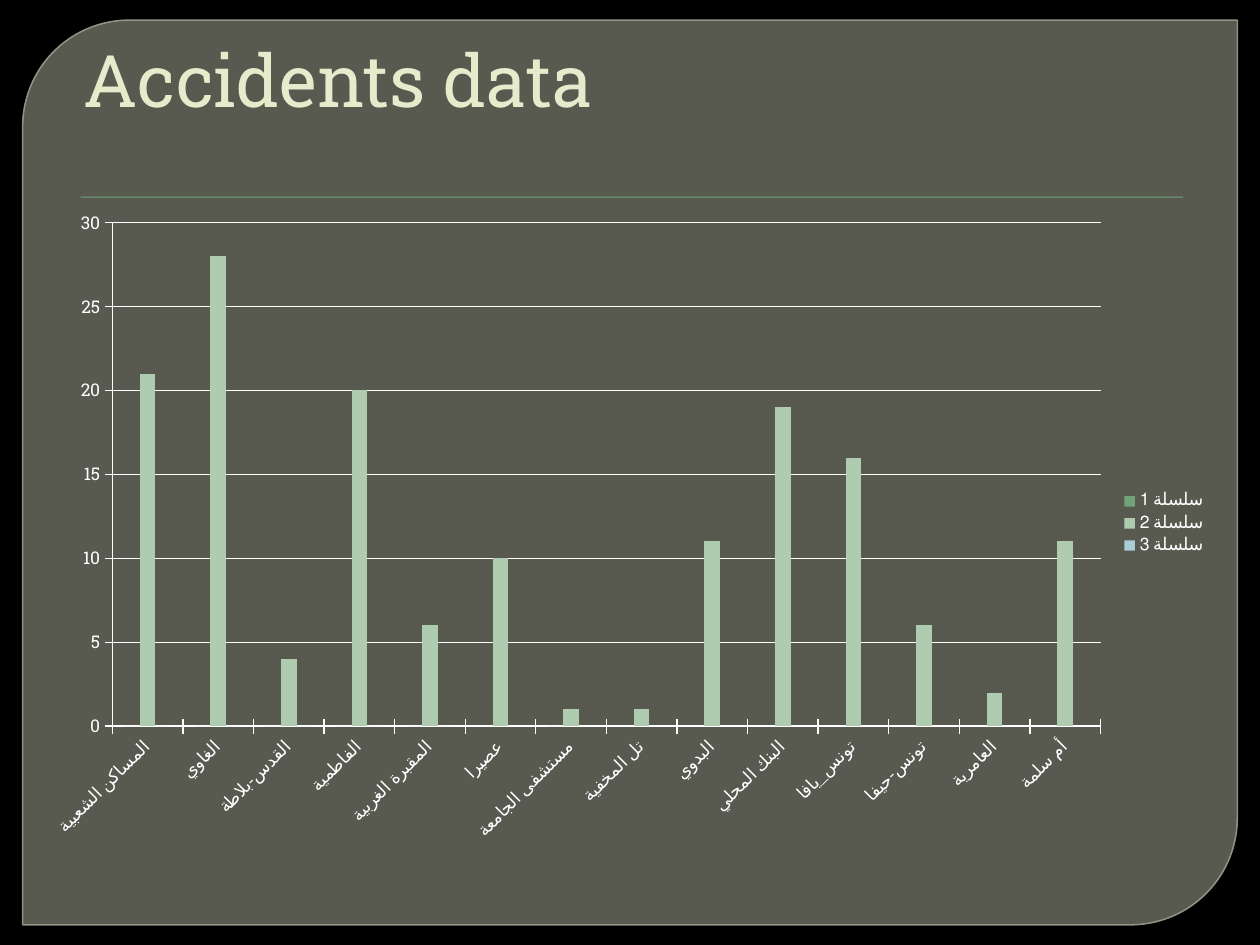
from dataclasses import dataclass

from lxml.etree import SubElement
from pptx import Presentation
from pptx.chart.data import CategoryChartData
from pptx.dml.color import RGBColor
from pptx.enum.chart import XL_CHART_TYPE, XL_LEGEND_POSITION, XL_TICK_MARK
from pptx.enum.shapes import MSO_SHAPE
from pptx.enum.text import MSO_ANCHOR, MSO_AUTO_SIZE, PP_ALIGN
from pptx.oxml import parse_xml
from pptx.oxml.ns import nsdecls, qn
from pptx.util import Inches, Pt


@dataclass(frozen=True)
class Theme:
    """Colours, font and type sizes of the deck."""

    background: str = "000000"
    panel: str = "888B7B"
    panel_line: str = "9DA090"
    rule: str = "72A376"
    title: str = "E7EACB"
    chart: str = "FFFFFF"
    series: tuple = ("72A376", "B0CCB0", "A8CDD7")
    font: str = "Roboto Slab"
    title_size: float = 41.4
    chart_size: float = 10


CATEGORIES = [
    "المساكن الشعبية", "الغاوي", "القدس-بلاطة", "الفاطمية", "المقبرة الغربية",
    "عصيرا", "مستشفى الجامعة", "تل المخفية", "البدوي", "البنك المحلي",
    "تونس_يافا", "تونس-حيفا", "العامرية", "أم سلمة",
]
SERIES = {
    "سلسلة 1": [0] * 5 + [None, 0] + [None] * 7,
    "سلسلة 2": [21, 28, 4, 20, 6, 10, 1, 1, 11, 19, 16, 6, 2, 11],
    "سلسلة 3": [0] * 5 + [None] * 9,
}


def apply(target, values):
    """Set every attribute named in a dict of format values."""
    for name, value in values.items():
        setattr(target, name, value)


def paint(color_format, color, alpha=None):
    """Set a solid colour, with an optional opacity in percent."""
    color_format.rgb = RGBColor.from_string(color)
    if alpha is not None:
        node = next(color_format._xFill.iter(qn("a:srgbClr")))
        SubElement(node, qn("a:alpha"), val=str(alpha * 1000))


class SlideBuilder:
    """Holds the theme and the current slide, and adds elements to it."""

    def __init__(self, deck, theme):
        """Add a title-only slide with a plain background."""
        self.theme = theme
        self.slide = deck.slides.add_slide(deck.slide_layouts[5])
        fill = self.slide.background.fill
        fill.solid()
        paint(fill.fore_color, theme.background)

    def shape(self, kind, place, color, alpha=None):
        """Add a filled shape without line or shadow."""
        shape = self.slide.shapes.add_shape(kind, *map(Inches, place))
        shape.shadow.inherit = False
        shape.fill.solid()
        paint(shape.fill.fore_color, color, alpha)
        shape.line.fill.background()
        return shape

    def panel(self, place):
        """Add the translucent panel with two rounded corners."""
        panel = self.shape(MSO_SHAPE.ROUND_2_DIAG_RECTANGLE, place, self.theme.panel, 65)
        panel.adjustments[0], panel.adjustments[1] = 0.118, 0
        panel.line.fill.solid()
        paint(panel.line.fill.fore_color, self.theme.panel_line, 88)
        panel.line.width = Pt(0.87)

    def rule(self, place):
        """Add the thin rule with its soft shadow."""
        rule = self.shape(MSO_SHAPE.RECTANGLE, place, self.theme.rule)
        effects = rule._element.spPr.find(qn("a:effectLst"))
        effects.append(parse_xml(
            f'<a:outerShdw {nsdecls("a")} blurRad="12700" dist="12700" dir="5400000">'
            '<a:srgbClr val="000000"><a:alpha val="75000"/></a:srgbClr></a:outerShdw>'
        ))

    def title(self, text, place):
        """Fill the title placeholder and bring it to the front."""
        title = self.slide.shapes.title
        apply(title, dict(zip(("left", "top", "width", "height"), map(Inches, place))))
        self.slide.shapes._spTree.append(title._element)
        frame = title.text_frame
        frame.text = text
        apply(frame, {
            "word_wrap": True,
            "auto_size": MSO_AUTO_SIZE.NONE,
            "vertical_anchor": MSO_ANCHOR.BOTTOM,
        })
        para = frame.paragraphs[0]
        para.alignment = PP_ALIGN.LEFT
        para._p.get_or_add_pPr().set("marL", str(Inches(0.06)))
        span = para.runs[0]
        apply(span.font, {"name": self.theme.font, "size": Pt(self.theme.title_size)})
        paint(span.font.color, self.theme.title)

    def chart(self, categories, series, place, plot_area):
        """Add the clustered column chart with its legend."""
        data = CategoryChartData()
        data.categories = categories
        for name, values in series.items():
            data.add_series(name, values)
        chart = self.slide.shapes.add_chart(
            XL_CHART_TYPE.COLUMN_CLUSTERED, *map(Inches, place), data
        ).chart
        apply(chart, {"has_title": False, "has_legend": True})
        apply(chart.font, {"name": self.theme.font, "size": Pt(self.theme.chart_size)})
        paint(chart.font.color, self.theme.chart)
        apply(chart.legend, {
            "position": XL_LEGEND_POSITION.RIGHT, "include_in_layout": False,
        })
        plot = chart.plots[0]
        apply(plot, {"gap_width": 150, "overlap": 0, "vary_by_categories": False})
        for item, color in zip(plot.series, self.theme.series):
            item.format.fill.solid()
            paint(item.format.fill.fore_color, color)
        self.axes(chart)
        self.plot_layout(chart, plot_area)

    def axes(self, chart):
        """Style both axes and the horizontal gridlines."""
        value_axis, category_axis = chart.value_axis, chart.category_axis
        apply(value_axis, {
            "minimum_scale": 0, "maximum_scale": 30, "major_unit": 5,
            "has_major_gridlines": True,
        })
        for axis in (value_axis, category_axis):
            axis.major_tick_mark = XL_TICK_MARK.CROSS
        for part in (value_axis, category_axis, value_axis.major_gridlines):
            line = part.format.line
            line.width = Pt(0.75)
            paint(line.color, self.theme.chart)
        labels = category_axis.tick_labels.font
        apply(labels, {"name": self.theme.font, "size": Pt(self.theme.chart_size)})
        paint(labels.color, self.theme.chart)
        body = category_axis._element.find(qn("c:txPr")).find(qn("a:bodyPr"))
        body.set("rot", "-2700000")
        body.set("vert", "horz")

    def plot_layout(self, chart, plot_area):
        """Fix the inner plot area as fractions of the chart."""
        area = chart._chartSpace.chart.plotArea
        for old in area.findall(qn("c:layout")):
            area.remove(old)
        values = {"layoutTarget": "inner", "xMode": "edge", "yMode": "edge"}
        values.update(zip("xywh", plot_area))
        nodes = "".join(f'<c:{name} val="{value}"/>' for name, value in values.items())
        area.insert(0, parse_xml(
            f'<c:layout {nsdecls("c")}><c:manualLayout>{nodes}</c:manualLayout></c:layout>'
        ))


def main():
    """Build the accidents slide and save it."""
    deck = Presentation()
    apply(deck, {"slide_width": Inches(10), "slide_height": Inches(7.5)})
    page = SlideBuilder(deck, Theme())
    page.panel((0.18, 0.16, 9.64, 7.18))
    page.rule((0.64, 1.56, 8.75, 0.01))
    page.title("Accidents data", (0.5, 0.28, 9, 0.74))
    page.chart(CATEGORIES, SERIES, (0.23, 1.56, 9.45, 5.19), (0.07, 0.04, 0.83, 0.77))
    deck.save("out.pptx")


if __name__ == "__main__":
    main()
